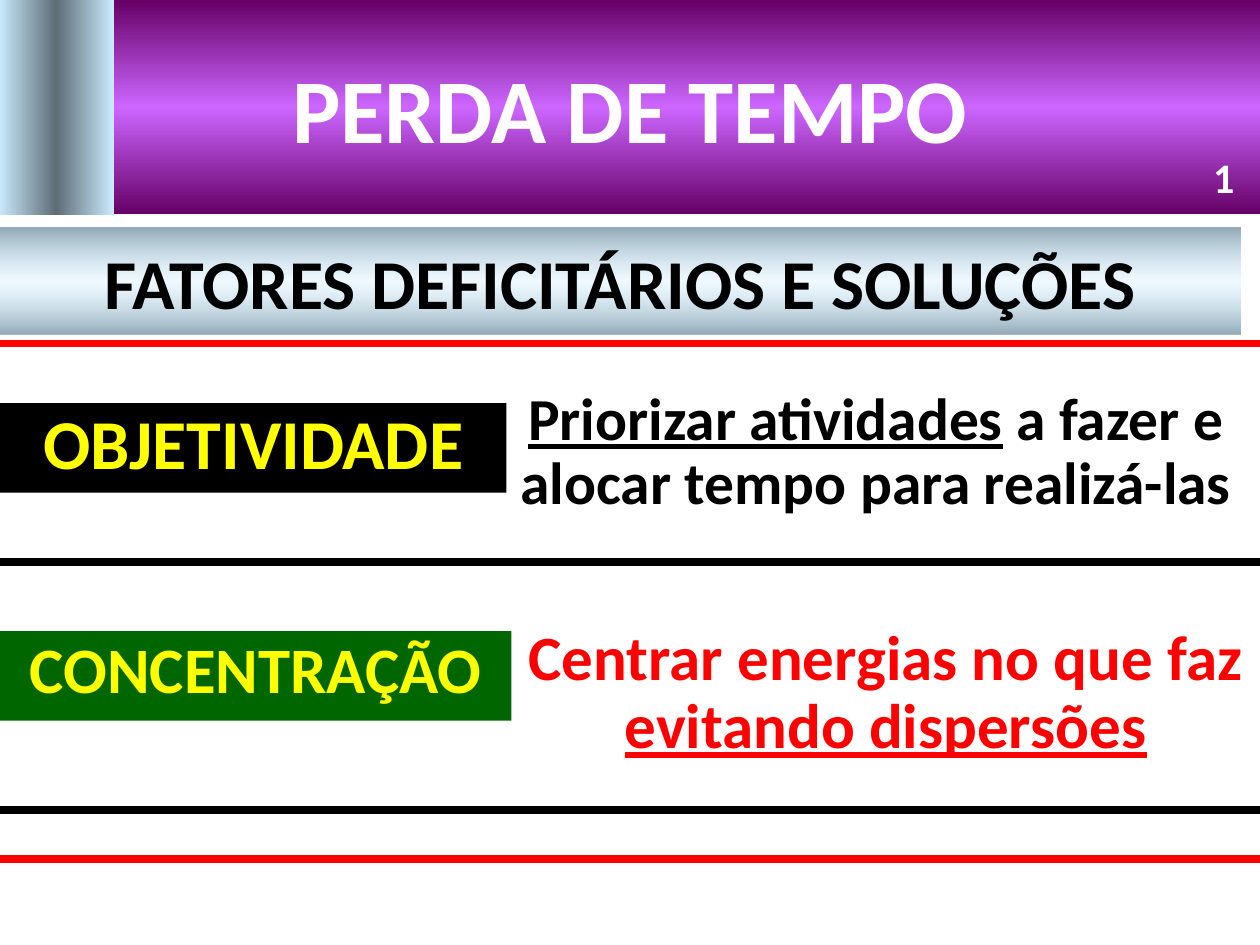
from dataclasses import dataclass
from typing import Optional

from lxml import etree
from pptx import Presentation
from pptx import util as u
from pptx.dml import color
from pptx.enum import shapes, text
from pptx.oxml import ns

FONT = "Calibri"
WIDTH, HEIGHT = 720, 540
RULE_WEIGHT = 4.5
CENTER = text.PP_ALIGN.CENTER
TOP, MIDDLE = text.MSO_ANCHOR.TOP, text.MSO_ANCHOR.MIDDLE


@dataclass
class Box:
    left: float
    top: float
    width: float
    height: float


@dataclass
class Label:
    words: list[tuple[str, bool]]
    size: float
    hue: str
    spacing: float = 1.0
    anchor: text.MSO_ANCHOR = TOP
    align: Optional[text.PP_ALIGN] = CENTER


@dataclass
class Factor:
    name: Label
    name_box: Box
    name_fill: str
    solution: Label
    solution_box: Box


@dataclass
class Rule:
    top: float
    hue: str


def rgb(hue: str) -> color.RGBColor:
    return color.RGBColor.from_string(hue)


def place(shape, box: Box) -> None:
    shape.left, shape.top = u.Pt(box.left), u.Pt(box.top)
    shape.width, shape.height = u.Pt(box.width), u.Pt(box.height)


def fill_gradient(shape, edge: str, middle: str, opacity: int = 100) -> None:
    shape.fill.gradient()
    shape.fill.gradient_angle = 270
    stops = shape.element.spPr.find(".//" + ns.qn("a:gsLst"))
    for stop in list(stops):
        stops.remove(stop)
    for position, hue, alpha in ((0, edge, 100), (50, middle, opacity), (100, edge, 100)):
        stop = etree.SubElement(stops, ns.qn("a:gs"), pos=str(position * 1000))
        tone = etree.SubElement(stop, ns.qn("a:srgbClr"), val=hue)
        if alpha < 100:
            etree.SubElement(tone, ns.qn("a:alpha"), val=str(alpha * 1000))


def write(shape, label: Label) -> None:
    frame = shape.text_frame
    frame.word_wrap = True
    frame.auto_size = text.MSO_AUTO_SIZE.NONE
    frame.vertical_anchor = label.anchor
    paragraph = frame.paragraphs[0]
    paragraph.alignment = label.align
    paragraph.line_spacing = label.spacing
    for words, underlined in label.words:
        run = paragraph.add_run()
        run.text = words
        run.font.name = FONT
        run.font.size = u.Pt(label.size)
        run.font.bold = True
        run.font.underline = underlined
        run.font.color.rgb = rgb(label.hue)


def add_panel(slide, box: Box):
    panel = slide.shapes.add_shape(shapes.MSO_SHAPE.RECTANGLE, 0, 0, 0, 0)
    place(panel, box)
    panel.shadow.inherit = False
    panel.line.fill.background()
    return panel


def add_text(slide, box: Box, label: Label) -> None:
    holder = slide.shapes.add_textbox(0, 0, 0, 0)
    place(holder, box)
    write(holder, label)


def add_factor(slide, factor: Factor) -> None:
    name = add_panel(slide, factor.name_box)
    name.fill.solid()
    name.fill.fore_color.rgb = rgb(factor.name_fill)
    write(name, factor.name)
    add_text(slide, factor.solution_box, factor.solution)


def add_rule(slide, rule: Rule) -> None:
    line = slide.shapes.add_connector(
        shapes.MSO_CONNECTOR.STRAIGHT, 0, u.Pt(rule.top), u.Pt(WIDTH), u.Pt(rule.top)
    )
    line.line.color.rgb = rgb(rule.hue)
    line.line.width = u.Pt(RULE_WEIGHT)
    etree.SubElement(line.element.spPr, ns.qn("a:effectLst"))


FACTORS = [
    Factor(
        Label([("OBJETIVIDADE", False)], 40, "FFFF00", 0.9),
        Box(0, 230.4, 289.4, 51.1),
        "000000",
        Label(
            [("Priorizar atividades", True), (" a fazer e alocar tempo para realizá-las", False)],
            34, "000000", 0.9,
        ),
        Box(286.6, 218.9, 427.7, 85),
    ),
    Factor(
        Label([("CONCENTRAÇÃO", False)], 37, "FFFF00", 0.9),
        Box(0, 360.7, 292.3, 51.1),
        "006600",
        Label(
            [("Centrar energias no que faz ", False), ("evitando dispersões", True)],
            36, "FF0000", 0.9,
        ),
        Box(292.3, 354.2, 427.7, 85),
    ),
]

RULES = [
    Rule(196.3, "FF0000"),
    Rule(321.1, "000000"),
    Rule(463, "000000"),
    Rule(491, "FF0000"),
]


def main() -> None:
    deck = Presentation()
    deck.slide_width, deck.slide_height = u.Pt(WIDTH), u.Pt(HEIGHT)
    slide = deck.slides.add_slide(deck.slide_layouts[5])

    title = slide.shapes.title
    place(title, Box(0, 0, WIDTH, 122.6))
    fill_gradient(title, "660066", "CC66FF")
    write(title, Label([("PERDA DE TEMPO", False)], 52, "FFFFFF", anchor=MIDDLE))

    add_text(
        slide, Box(686.2, 82.8, 33.8, 36), Label([("1", False)], 24, "FFFFFF", align=None)
    )

    pillar = add_panel(slide, Box(-29.2, 28.2, 122.6, 66.6))
    pillar.rotation = 270
    fill_gradient(pillar, "CCECFF", "5E6D76")

    subtitle = add_panel(slide, Box(0, 130.1, 708.8, 61.2))
    fill_gradient(subtitle, "92A9B6", "CCECFF", 30)
    write(
        subtitle,
        Label([("FATORES DEFICITÁRIOS E SOLUÇÕES", False)], 40, "000000", anchor=MIDDLE),
    )

    for factor in FACTORS:
        add_factor(slide, factor)
    for rule in RULES:
        add_rule(slide, rule)

    deck.save("out.pptx")


if __name__ == "__main__":
    main()
